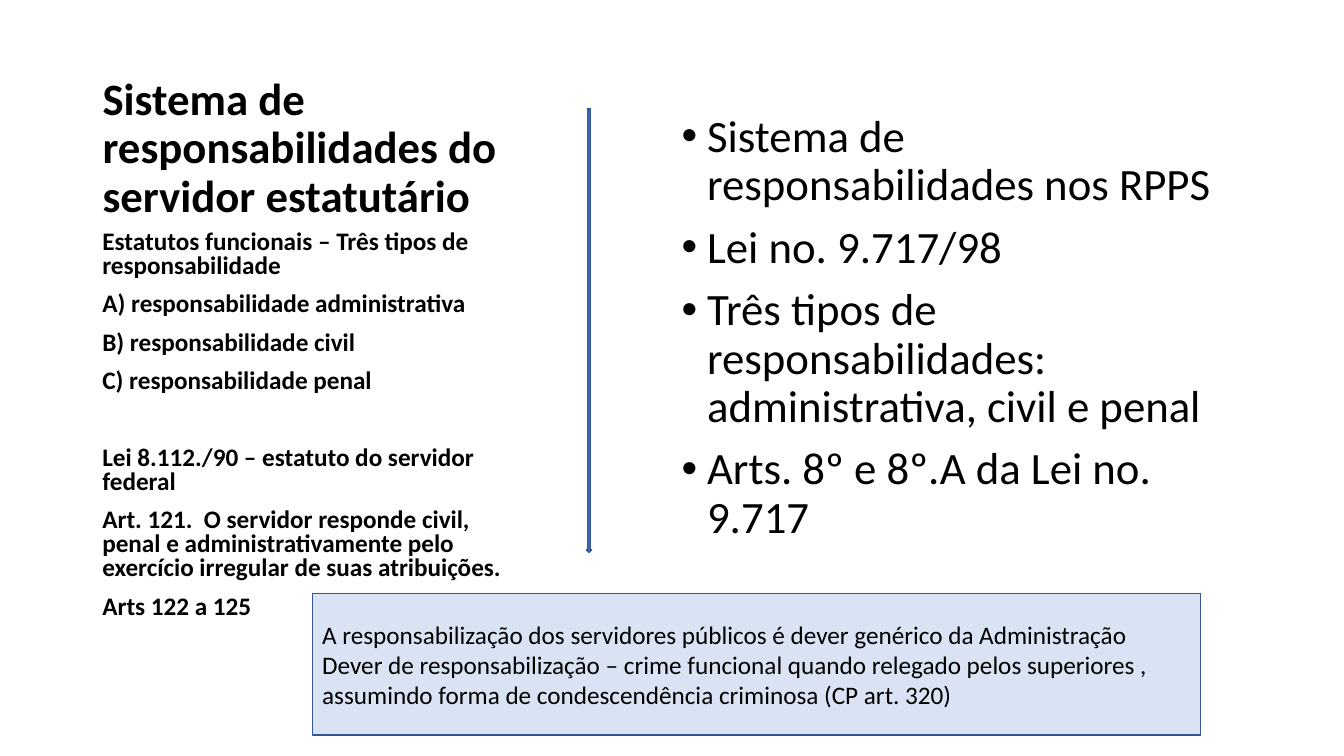
from pptx import Presentation, util as u
from pptx.dml.color import RGBColor
from pptx.enum import shapes, text
from pptx.oxml.ns import qn
from lxml import etree

TITLE = "Sistema de responsabilidades do servidor estatutário"
STATUTE = [
    "Estatutos funcionais – Três tipos de responsabilidade",
    "A) responsabilidade administrativa",
    "B) responsabilidade civil",
    "C) responsabilidade penal",
    "Lei 8.112./90 – estatuto do servidor federal",
    "Art. 121.  O servidor responde civil, penal e administrativamente pelo "
    "exercício irregular de suas atribuições.",
    "Arts 122 a 125",
]
LAW_START = 4  # the paragraph that opens the second group
PENSION = [
    "Sistema de responsabilidades nos RPPS",
    "Lei no. 9.717/98",
    "Três tipos de responsabilidades: administrativa, civil e penal",
    "Arts. 8º e 8º.A da Lei no. 9.717",
]
DUTY = [
    "A responsabilização dos servidores públicos é dever genérico da Administração",
    "Dever de responsabilização – crime funcional quando relegado pelos superiores , "
    "assumindo forma de condescendência criminosa (CP art. 320)",
]

# left, top, width, height in cm
LEFT, COLUMN_W = 2.33, 10.92
TITLE_BOX = (LEFT, 1.27, COLUMN_W, 4.45)
STATUTE_BOX = (LEFT, 5.7, COLUMN_W, 10.59)
PENSION_BOX = (16.93, 2.74, 14.61, 13.55)
DUTY_BOX = (7.87, 14.96, 22.38, 3.56)
ARROW_BOX = (14.78, 2.74, 0.13, 11.18)

BLACK, BLUE, PALE, EDGE = "000000", "4472C4", "DAE3F3", "325491"


def color(value):
    return RGBColor.from_string(value)


def cm(box):
    return [u.Cm(v) for v in box]


def write(sp, lines, size, bold=False, anchor=text.MSO_ANCHOR.TOP, **spacing):
    tf = sp.text_frame
    tf.word_wrap = True
    tf.auto_size = text.MSO_AUTO_SIZE.NONE
    tf.vertical_anchor = anchor
    for i, line in enumerate(lines):
        p = tf.paragraphs[0] if i == 0 else tf.add_paragraph()
        p.alignment = text.PP_ALIGN.LEFT
        for name, value in spacing.items():
            setattr(p, name, value)
        r = p.add_run()
        r.text = line
        for name, value in dict(name="Calibri", size=u.Pt(size), bold=bold).items():
            setattr(r.font, name, value)
        r.font.color.rgb = color(BLACK)
    return tf.paragraphs


def add_bullet(p, indent):
    pPr = p._p.get_or_add_pPr()
    pPr.set("marL", str(indent))
    pPr.set("indent", str(-indent))
    etree.SubElement(pPr, qn("a:buFont")).set("typeface", "Arial")
    etree.SubElement(pPr, qn("a:buChar")).set("char", "•")


def add_filled(slide, kind, box, fill):
    sp = slide.shapes.add_shape(kind, *cm(box))
    sp.shadow.inherit = False
    sp.fill.solid()
    sp.fill.fore_color.rgb = color(fill)
    sp.line.color.rgb = color(EDGE)
    sp.line.width = u.Pt(1)
    return sp


def main():
    prs = Presentation()
    prs.slide_width, prs.slide_height = u.Cm(33.87), u.Cm(19.05)
    slide = prs.slides.add_slide(prs.slide_layouts[5])

    title = slide.shapes.title
    title.left, title.top, title.width, title.height = cm(TITLE_BOX)
    write(title, [TITLE], 32, True, text.MSO_ANCHOR.BOTTOM, line_spacing=0.9)

    pension = slide.shapes.add_textbox(*cm(PENSION_BOX))
    for p in write(pension, PENSION, 32, line_spacing=0.9, space_before=u.Pt(10)):
        add_bullet(p, u.Cm(0.64))

    statute = slide.shapes.add_textbox(*cm(STATUTE_BOX))
    lines = write(statute, STATUTE, 18, True, line_spacing=0.8, space_before=u.Pt(10))
    lines[LAW_START].space_before = u.Pt(37.5)

    duty = add_filled(slide, shapes.MSO_SHAPE.RECTANGLE, DUTY_BOX, PALE)
    write(duty, DUTY, 18, anchor=text.MSO_ANCHOR.MIDDLE)
    add_filled(slide, shapes.MSO_SHAPE.DOWN_ARROW, ARROW_BOX, BLUE)

    prs.save("out.pptx")


if __name__ == "__main__":
    main()
